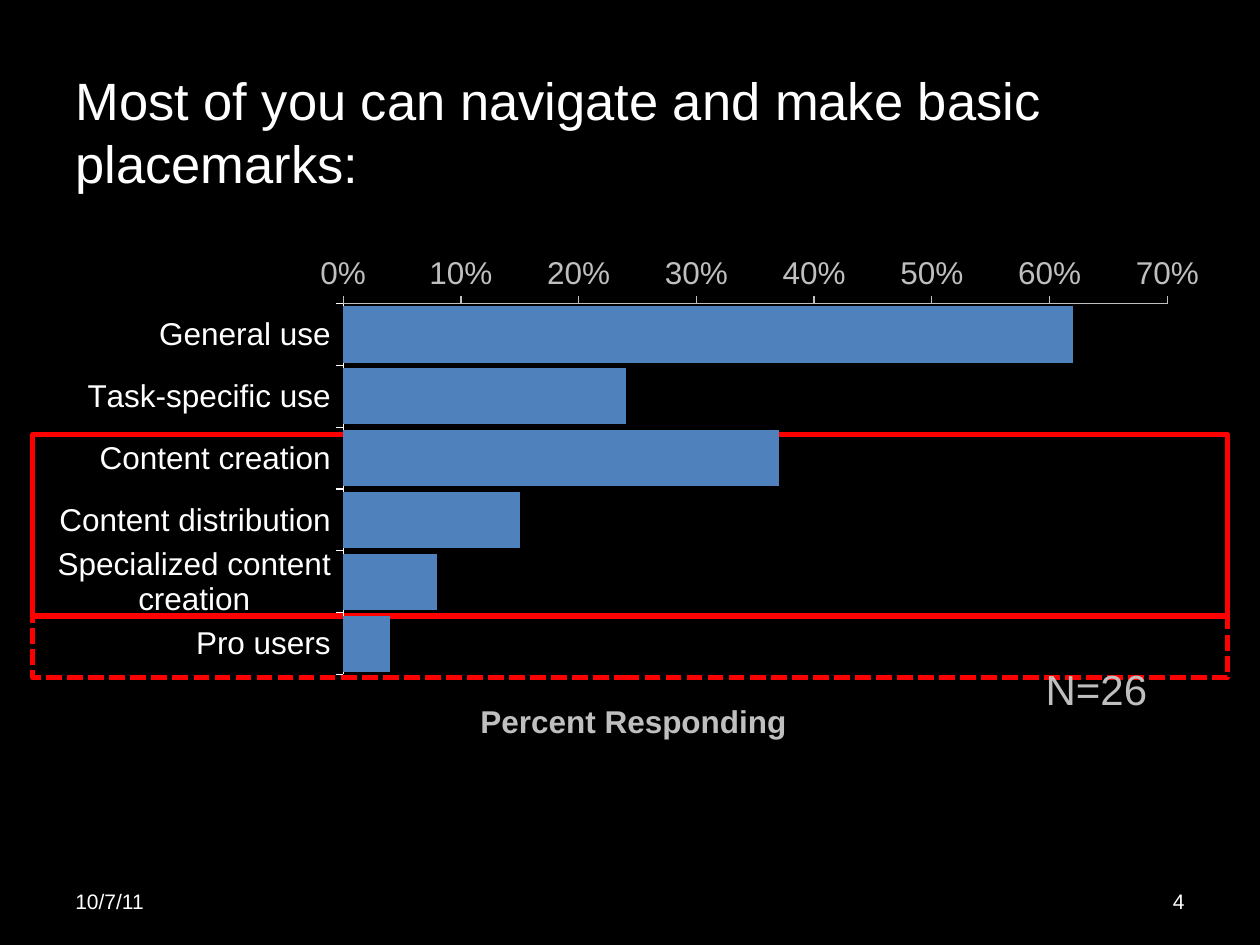
from lxml import etree
from pptx import Presentation
from pptx.chart.data import CategoryChartData
from pptx.dml.color import RGBColor
from pptx.enum.chart import XL_CHART_TYPE as CHART, XL_TICK_MARK as TICK
from pptx.enum.dml import MSO_LINE
from pptx.enum.shapes import MSO_SHAPE as SHAPE
from pptx.enum.text import MSO_ANCHOR as ANCHOR, PP_ALIGN as ALIGN
from pptx.oxml.ns import qn
from pptx.util import Inches, Pt

BLACK = RGBColor(0x00, 0x00, 0x00)
WHITE = RGBColor(0xFF, 0xFF, 0xFF)
GREY = RGBColor(0xBF, 0xBF, 0xBF)
RED = RGBColor(0xFF, 0x00, 0x00)
BLUE = RGBColor(0x4F, 0x81, 0xBD)

# Left edge and width shared by the chart and the frames around its rows
LEFT, WIDTH = 0.26, 9.48

RESPONSES = {
    "General use": 0.62,
    "Task-specific use": 0.24,
    "Content creation": 0.37,
    "Content distribution": 0.15,
    "Specialized content creation": 0.08,
    "Pro users": 0.04,
}


def set_layout(parent, **settings):
    """Give a plot area or chart title a fixed place, as fractions of the chart."""
    layout = parent.find(qn("c:layout"))
    if layout is None:
        layout = etree.Element(qn("c:layout"))
        parent.insert(0, layout)
    manual = etree.SubElement(layout, qn("c:manualLayout"))
    for name, value in settings.items():
        etree.SubElement(manual, qn(f"c:{name}")).set("val", str(value))


class SlideBuilder:
    font_name = "Arial"

    def __init__(self, prs):
        self.s = prs.slides.add_slide(prs.slide_layouts[6])
        fill = self.s.background.fill
        fill.solid()
        fill.fore_color.rgb = BLACK

    def style(self, font, size, color, bold=False):
        font.name = self.font_name
        font.size = Pt(size)
        font.bold = bold
        font.color.rgb = color

    def text(self, text, x, y, w, h, size, color=WHITE, align=ALIGN.LEFT,
             anchor=ANCHOR.TOP, wrap=True):
        box = self.s.shapes.add_textbox(Inches(x), Inches(y), Inches(w), Inches(h))
        tf = box.text_frame
        tf.word_wrap = wrap
        tf.vertical_anchor = anchor
        p = tf.paragraphs[0]
        p.text = text
        p.alignment = align
        self.style(p.runs[0].font, size, color)

    def frame(self, y, h, dash=MSO_LINE.SOLID):
        sp = self.s.shapes.add_shape(
            SHAPE.RECTANGLE, Inches(LEFT), Inches(y), Inches(WIDTH), Inches(h))
        sp.shadow.inherit = False
        sp.fill.background()
        sp.line.color.rgb = RED
        sp.line.width = Pt(3)
        sp.line.dash_style = dash

    def axis(self, axis, color):
        axis.has_major_gridlines = False
        axis.major_tick_mark = TICK.OUTSIDE
        axis.minor_tick_mark = TICK.NONE
        axis.format.line.color.rgb = color
        axis.format.line.width = Pt(0.75)
        self.style(axis.tick_labels.font, 18, color)

    def bar_chart(self, values, axis_title, y, h):
        data = CategoryChartData(number_format="0%")
        data.categories = list(values)
        data.add_series("Series 1", list(values.values()))
        chart = self.s.shapes.add_chart(
            CHART.BAR_CLUSTERED, Inches(LEFT), Inches(y), Inches(WIDTH), Inches(h),
            data).chart
        chart.has_legend = False
        chart.has_title = False
        self.style(chart.font, 18, WHITE)

        plot = chart.plots[0]
        plot.gap_width = 10
        plot.vary_by_categories = False
        fill = plot.series[0].format.fill
        fill.solid()
        fill.fore_color.rgb = BLUE

        self.axis(chart.category_axis, WHITE)
        chart.category_axis.reverse_order = True

        percent = chart.value_axis
        self.axis(percent, GREY)
        percent.minimum_scale, percent.maximum_scale = 0, 0.7
        percent.major_unit = 0.1
        percent.tick_labels.number_format = "0%"
        percent.tick_labels.number_format_is_linked = False
        p = percent.axis_title.text_frame.paragraphs[0]
        p.text = axis_title
        self.style(p.runs[0].font, 18, GREY, bold=True)

        # The title sits below the plot while the scale runs along the top
        set_layout(percent.axis_title._element, xMode="edge", yMode="edge",
                   x=0.37, y=0.87)
        set_layout(chart._chartSpace.chart.plotArea, layoutTarget="inner",
                   xMode="edge", yMode="edge", x=0.26, y=0.11, w=0.69, h=0.72)


def main():
    prs = Presentation()
    prs.slide_width, prs.slide_height = Inches(10), Inches(7.5)
    slide = SlideBuilder(prs)
    slide.frame(3.45, 1.44)
    slide.frame(4.89, 0.49, MSO_LINE.SQUARE_DOT)
    slide.bar_chart(RESPONSES, "Percent Responding", 1.96, 4.09)
    slide.text("10/7/11", 0.5, 6.95, 2.33, 0.4, 12, anchor=ANCHOR.MIDDLE)
    slide.text("4", 7.17, 6.95, 2.33, 0.4, 12, align=ALIGN.RIGHT, anchor=ANCHOR.MIDDLE)
    slide.text("Most of you can navigate and make basic placemarks:",
               0.5, 0.49, 9, 1.11, 30)
    slide.text("N=26", 8.2, 5.22, 1.02, 0.5, 24, GREY, wrap=False)
    prs.save("out.pptx")


if __name__ == "__main__":
    main()
